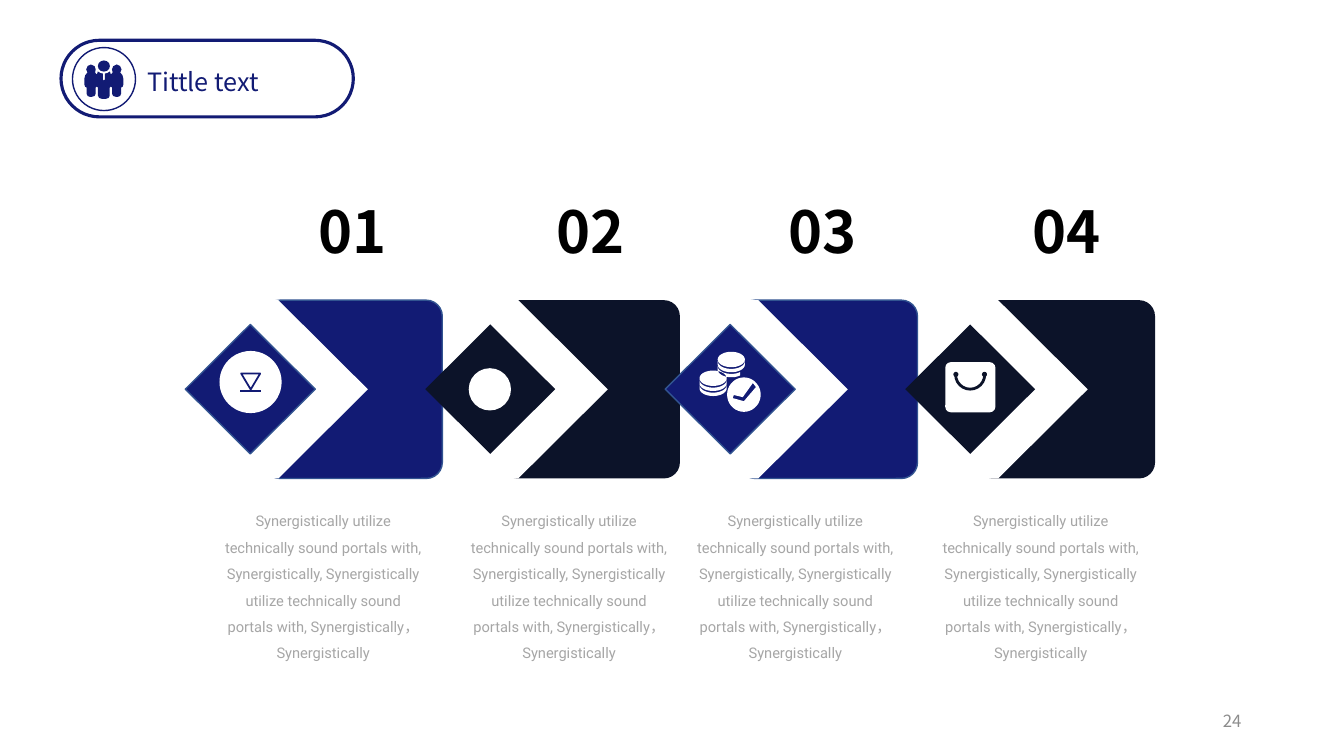
from math import cos, pi, sin

from lxml import etree
from pptx import Presentation
from pptx.dml.color import RGBColor
from pptx.enum import shapes as sh, text as tx
from pptx.oxml.ns import qn
from pptx.util import Pt

NAVY = RGBColor(0x12, 0x1B, 0x74)
DARK = RGBColor(0x0C, 0x13, 0x29)
EDGE = RGBColor(0x32, 0x54, 0x91)
WHITE = RGBColor(0xFF, 0xFF, 0xFF)
BLACK = RGBColor(0, 0, 0)
GRAY = RGBColor(0xA6, 0xA6, 0xA6)
PAGE = RGBColor(0x8C, 0x8C, 0x8C)
SANS = "Noto Sans CJK SC"
KIND = sh.MSO_SHAPE
LEFT, MID, RIGHT = tx.PP_ALIGN.LEFT, tx.PP_ALIGN.CENTER, tx.PP_ALIGN.RIGHT
TOP, CORE = tx.MSO_ANCHOR.TOP, tx.MSO_ANCHOR.MIDDLE
BODY = ("Synergistically utilize technically sound portals with, "
        "Synergistically, Synergistically utilize technically sound "
        "portals with, Synergistically，Synergistically")
COUNT = 4
STEP = 171.4
CARD = 169.7
NUMS = (185.9, 355.8, 521.8, 696)
NOTES = (158.2, 333.8, 495.4, 670.7)
AXIS = 74.2
CROWD = (
    (0, 57.6), (0.7, 56.9), (0.7, 52.6), (2.5, 52.2), (4.3, 51.1), (5, 53.3),
    (6.3, 51.8), (5.8, 49.7), (6.6, 47.4), (9.2, 46.1), (11.6, 47.2),
    (12.6, 49.7), (11.7, 51.8), (13.3, 53.8), (13.9, 56.2), (13.9, 60.5),
    (13.4, 62), (12.3, 62.6), (12.3, 67), (11.6, 68.6), (10.1, 69.2),
    (8.6, 69.2), (6.6, 68.6), (5.9, 67), (5.9, 62.6), (5, 61.9),
    (4.2, 62.6), (4.2, 68.4), (3.4, 70), (1.5, 70.6))
TICK = ((531.4, 286.6), (523.4, 284.4), (524.2, 282.2),
        (530.6, 283.7), (537.8, 273.6), (540, 276.5))


def paint(item, fill=None, line=None, width=1):
    item.shadow.inherit = False
    if fill is None:
        item.fill.background()
    else:
        item.fill.solid()
        item.fill.fore_color.rgb = fill
    if line is None:
        item.line.fill.background()
    else:
        item.line.color.rgb = line
        item.line.width = Pt(width)
    return item


def draw(slide, kind, x, y, w, h, adj=(), **look):
    item = slide.shapes.add_shape(kind, Pt(x), Pt(y), Pt(w), Pt(h))
    for i, val in enumerate(adj):
        item.adjustments[i] = val
    return paint(item, **look)


def trace(slide, *loops, **look):
    loops = [[(Pt(x), Pt(y)) for x, y in loop] for loop in loops]
    pen = slide.shapes.build_freeform(*loops[0][0])
    for i, loop in enumerate(loops):
        if i:
            pen.move_to(*loop[0])
        pen.add_line_segments(loop[1:], close=True)
    return paint(pen.convert_to_shape(), **look)


def bend(x, y, rx, ry, start=0, end=360, parts=36):
    turns = [(start + (end - start) * i / parts) * pi / 180
             for i in range(parts + 1)]
    return [(x + rx * cos(t), y + ry * sin(t)) for t in turns]


def rule(slide, x, y, end, color, width):
    item = slide.shapes.add_connector(
        sh.MSO_CONNECTOR.STRAIGHT, Pt(x), Pt(y), Pt(end), Pt(y))
    item.line.color.rgb = color
    item.line.width = Pt(width)
    etree.SubElement(item._element.spPr, qn("a:effectLst"))


def write(item, words, size, color, font=SANS, bold=False, align=LEFT,
          anchor=TOP, space=1, inset=None):
    frame = item.text_frame
    frame.word_wrap = True
    frame.auto_size = tx.MSO_AUTO_SIZE.NONE
    frame.vertical_anchor = anchor
    if inset is not None:
        frame.margin_left = frame.margin_right = Pt(inset)
        frame.margin_top = frame.margin_bottom = Pt(inset)
    para = frame.paragraphs[0]
    para.alignment = align
    para.line_spacing = space
    run = para.add_run()
    run.text = words
    run.font.size = Pt(size)
    run.font.name = font
    run.font.bold = bold
    run.font.color.rgb = color


def label(slide, x, y, w, h, words, **form):
    item = slide.shapes.add_textbox(Pt(x), Pt(y), Pt(w), Pt(h))
    write(item, words, **form)


def header(slide):
    title = slide.shapes.title
    title.left, title.top = Pt(97.9), Pt(43.9)
    title.width, title.height = Pt(144.7), Pt(28.8)
    write(title, "Tittle text", size=18, color=NAVY)
    draw(slide, KIND.ROUNDED_RECTANGLE, 43.6, 28.8, 208.8, 54.7, (0.5,),
         line=NAVY, width=2.25)
    draw(slide, KIND.OVAL, 51.8, 34, 45, 45, fill=WHITE, line=NAVY)
    draw(slide, KIND.OVAL, 69.9, 43.2, 8.6, 8, fill=NAVY)
    half = [(AXIS + x, y) for x, y in CROWD]
    other = [(AXIS - x, y) for x, y in reversed(CROWD)]
    trace(slide, half + other, fill=NAVY)


def badge(slide):
    draw(slide, KIND.OVAL, 156.8, 250.7, 44.4, 44.4, fill=WHITE)
    trace(slide, ((172.3, 266.8), (185.9, 266.8), (179.1, 278.2)),
          line=NAVY, width=1.25)
    rule(slide, 171.7, 279.5, 186.5, NAVY, 1.25)


def fruit(slide):
    draw(slide, KIND.OVAL, 334.8, 263, 30.2, 30.2, fill=WHITE)


def coins(slide):
    loops = [bend(531.4, 281.9, 12, 12.3), TICK]
    for x, y, ends in ((522.4, 256.8, (180, 130)), (509.4, 270.2, (180, 180))):
        loops.append(bend(x, y, 9.7, 5.5))
        for drop, end in zip((3.6, 7.2), ends):
            outer = bend(x, y + drop, 9.7, 5.5, 180 - end, 180)
            inner = bend(x, y + drop - 2.4, 9.7, 5.5, 180, 180 - end)
            loops.append(outer + inner)
    trace(slide, *loops, fill=WHITE)


def bag(slide):
    draw(slide, KIND.ROUNDED_RECTANGLE, 675.2, 258.7, 35.8, 35.8, (0.11,),
         fill=WHITE)
    draw(slide, KIND.ARC, 682.6, 257.2, 20.8, 20.8, (0, 108),
         line=DARK, width=2)
    for x in (681, 701.4):
        draw(slide, KIND.OVAL, x, 265.6, 3.6, 3.6, fill=DARK)


def tone(i):
    return {"fill": DARK} if i % 2 else {"fill": NAVY, "line": EDGE}


def main():
    deck = Presentation()
    deck.slide_width, deck.slide_height = Pt(960), Pt(540)
    slide = deck.slides.add_slide(deck.slide_layouts[5])
    header(slide)
    for i in range(COUNT):
        draw(slide, KIND.ROUNDED_RECTANGLE, 188.6 + i * CARD, 214.4,
             127.4, 127.4, (0.09,), **tone(i))
    for i in range(COUNT):
        draw(slide, KIND.PENTAGON, 178.6 + i * STEP, 214.4, 84.2, 127.4,
             (0.76,), fill=WHITE)
        draw(slide, KIND.DIAMOND, 132.4 + i * STEP, 231.8, 92.8, 92.4, **tone(i))
    for icon in (badge, fruit, coins, bag):
        icon(slide)
    for i, (num, note) in enumerate(zip(NUMS, NOTES), 1):
        label(slide, num, 130.1, 131.8, 51.8, f"{i:02}", size=41.3,
              color=BLACK, bold=True, align=MID, inset=9.4)
        label(slide, note, 359.5, 145.4, 131, BODY, size=10.5, color=GRAY,
              font="Roboto", align=MID, space=1.5, inset=0)
    label(slide, 678, 500.4, 216, 28.8, "24", size=12, color=PAGE,
          align=RIGHT, anchor=CORE)
    deck.save("out.pptx")


if __name__ == "__main__":
    main()
